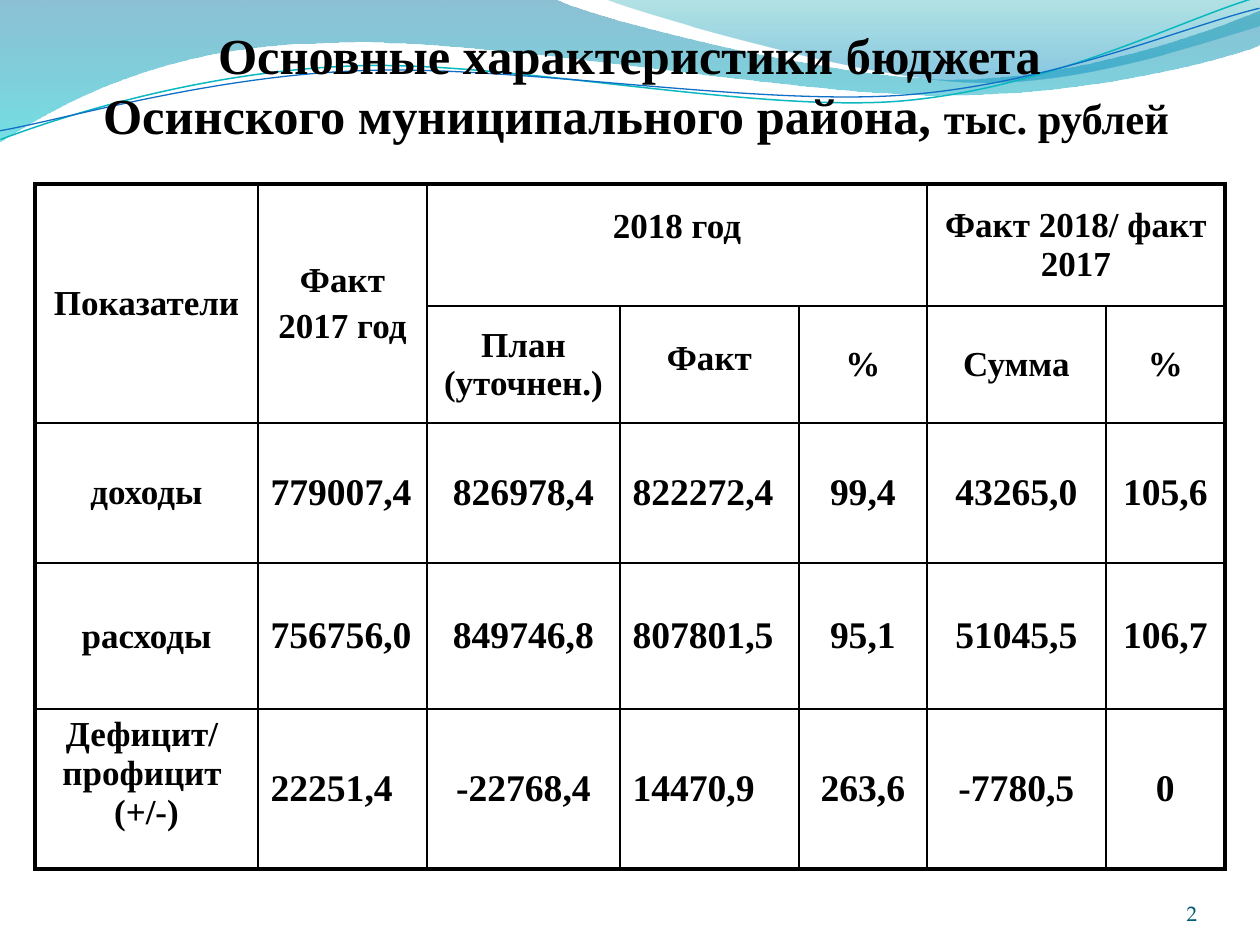
from math import cos, radians, sin

from lxml.etree import SubElement
from pptx import Presentation
from pptx.dml.color import RGBColor
from pptx.enum.text import MSO_ANCHOR, PP_ALIGN
from pptx.oxml.ns import qn
from pptx.util import Emu, Pt

PX = 914400 // 126
COLORS = {"ink": "000000", "number": "045D75", "teal line": "0AB8BF", "blue line": "0F6FC6",
          "deep blue": "0074A1", "aqua": "00C6CF", "sea": "00A1A9", "sky": "008BBF"}
SERIF = "Times New Roman"

TITLE = [("Основные характеристики бюджета \vОсинского муниципального района, ", 28.8),
         ("тыс. рублей", 24.3)]
PAGE_NUMBER = "2"

# None marks a cell covered by a merge
ROWS = [
    ["Показатели", "Факт\n2017 год", "2018 год", None, None, "Факт 2018/ факт 2017", None],
    [None, None, "План (уточнен.)", "Факт", "%", "Сумма", "%"],
    ["доходы", "779007,4", "826978,4", "822272,4", "99,4", "43265,0", "105,6"],
    ["расходы", "756756,0", "849746,8", "807801,5", "95,1", "51045,5", "106,7"],
    ["Дефицит/ \vпрофицит \v(+/-)", "22251,4", "-22768,4", "14470,9", "263,6", "-7780,5", "0"],
]
SPANS = {(0, 0): (2, 1), (0, 1): (2, 1), (0, 2): (1, 3), (0, 5): (1, 2)}
COLUMN_WIDTHS = [223, 169, 193, 179, 128, 179, 119]
ROW_HEIGHTS = [122, 117, 140, 146, 160]
HEADER_ROWS = 2
LEFT_COLUMNS = (1, 3)
RAISED = {(0, 2): 44, (1, 3): 18}  # bottom margin that lifts the text
TOP_ALIGNED = (4, 0)

# Wave outlines: two numbers are a straight step, six are a Bézier curve
BANDS = [
    ([(0, 0), (554, -1), (600, 21, 837, 79, 955, 79), (1075, 79, 1207, 33, 1260, 11),
      (1261, 45), (1239, 55, 1096, 96, 940, 95), (784, 95, 481, 35, 324, 43),
      (163, 45, 58, 105, -1, 142)],
     [(0, "deep blue", 45), (1, "aqua", 55)]),
    ([(604, -1), (641, 14, 859, 78, 969, 82), (1079, 87, 1211, 40, 1260, 26), (1260, 0)],
     [(0, "sea", 30), (0.8, "sky", 45)]),
]
WAVES = [
    ([(0, 140), (60, 117, 199, 72, 349, 66), (498, 59, 747, 112, 898, 101),
      (1050, 89, 1182, 19, 1257, -3)], "teal line", 0.85),
    ([(0, 131), (59, 121, 207, 77, 357, 71), (508, 64, 752, 106, 903, 95),
      (1053, 84, 1186, 26, 1260, 8)], "blue line", 0.75),
]
WAVE_TILT = 2.7
WAVE_PIVOT = (629, 73)


def rgb(name):
    return RGBColor.from_string(COLORS[name])


def pairs(step):
    return list(zip(step[::2], step[1::2]))


def level(point):
    """Turn a point clockwise by the tilt, so the rotated shape puts it back."""
    dx, dy = point[0] - WAVE_PIVOT[0], point[1] - WAVE_PIVOT[1]
    c, s = cos(radians(WAVE_TILT)), sin(radians(WAVE_TILT))
    return WAVE_PIVOT[0] + dx * c - dy * s, WAVE_PIVOT[1] + dx * s + dy * c


def add_outline(page, steps, close, place=lambda point: point):
    points = [place(point) for step in steps for point in pairs(step)]
    builder = page.shapes.build_freeform(*points[0], scale=PX)
    builder.add_line_segments(points[1:], close=close)
    shape = builder.convert_to_shape()
    shape.shadow.inherit = False
    # Join each three straight steps of a curve into one Bézier step
    segments = iter(list(shape._element.iter(qn("a:lnTo"))))
    for step in steps[1:]:
        first = next(segments)
        if len(step) == 6:
            first.tag = qn("a:cubicBezTo")
            for _ in range(2):
                other = next(segments)
                first.append(other[0])
                other.getparent().remove(other)
    return shape


def add_band(page, steps, stops):
    band = add_outline(page, steps, True)
    band.line.fill.background()
    band.fill.gradient()
    band.fill.gradient_angle = 270
    for stop, (position, color, _) in zip(band.fill.gradient_stops, stops):
        stop.position = position
        stop.color.rgb = rgb(color)
    for node, (_, _, opacity) in zip(band._element.spPr.iter(qn("a:srgbClr")), stops):
        SubElement(node, qn("a:alpha"), val=str(opacity * 1000))


def add_wave(page, steps, color, width):
    wave = add_outline(page, steps, False, level)
    wave.rotation = 360 - WAVE_TILT
    wave.fill.background()
    wave.line.color.rgb = rgb(color)
    wave.line.width = Pt(width)


def style(font, size, color="ink", name=SERIF, bold=True):
    font.size, font.name, font.bold = Pt(size), name, bold
    font.color.rgb = rgb(color)


def add_text(page, left, top, width, height, align):
    box = page.shapes.add_textbox(*(Emu(v * PX) for v in (left, top, width, height)))
    frame = box.text_frame
    frame.word_wrap = True
    frame.vertical_anchor = MSO_ANCHOR.BOTTOM
    frame.margin_left = frame.margin_right = frame.margin_top = frame.margin_bottom = 0
    para = frame.paragraphs[0]
    para.alignment = align
    return para


def set_borders(cell, thick_sides):
    properties = cell._tc.get_or_add_tcPr()
    for position, side in enumerate("LRTB"):
        width = Pt(2.25 if side in thick_sides else 1)
        line = properties.makeelement(qn("a:ln" + side), {"w": str(int(width))})
        SubElement(SubElement(line, qn("a:solidFill")), qn("a:srgbClr"), val=COLORS["ink"])
        properties.insert(position, line)


def fill_cell(cell, row, column, text):
    is_number = row >= HEADER_ROWS and column > 0
    is_left = is_number and column in LEFT_COLUMNS
    cell.text = text
    cell.vertical_anchor = MSO_ANCHOR.TOP if (row, column) == TOP_ALIGNED else MSO_ANCHOR.MIDDLE
    cell.margin_bottom = Emu(RAISED.get((row, column), 6) * PX)
    for para in cell.text_frame.paragraphs:
        para.alignment = PP_ALIGN.LEFT if is_left else PP_ALIGN.CENTER
        para.space_before = Pt(0 if is_left else 4)
        style(para.font, 21.5 if is_number else 20)


def add_budget_table(page):
    table = page.shapes.add_table(
        len(ROWS), len(COLUMN_WIDTHS), Emu(35 * PX), Emu(184 * PX),
        Emu(sum(COLUMN_WIDTHS) * PX), Emu(sum(ROW_HEIGHTS) * PX)).table
    table.first_row = table.horz_banding = False
    for column, width in zip(table.columns, COLUMN_WIDTHS):
        column.width = Emu(width * PX)
    for row, height in zip(table.rows, ROW_HEIGHTS):
        row.height = Emu(height * PX)
    for r, texts in enumerate(ROWS):
        for c, text in enumerate(texts):
            cell = table.cell(r, c)
            cell.fill.background()
            if text is None:
                continue
            down, across = SPANS.get((r, c), (1, 1))
            if (down, across) != (1, 1):
                cell.merge(table.cell(r + down - 1, c + across - 1))
            fill_cell(cell, r, c, text)
            edges = {"L": c == 0, "R": c + across == len(texts),
                     "T": r == 0, "B": r + down == len(ROWS)}
            set_borders(cell, [side for side, outer in edges.items() if outer])


def main():
    deck = Presentation()
    deck.slide_width, deck.slide_height = Emu(1260 * PX), Emu(945 * PX)
    page = deck.slides.add_slide(deck.slide_layouts[6])

    # Wavy header
    for band in BANDS:
        add_band(page, *band)
    for wave in WAVES:
        add_wave(page, *wave)

    # Title
    para = add_text(page, 69, 0, 1134, 145, PP_ALIGN.CENTER)
    for text, size in TITLE:
        for i, part in enumerate(text.split("\v")):
            if i:
                para.add_line_break()
            span = para.add_run()
            span.text = part
            style(span.font, size)

    add_budget_table(page)

    # Page number
    para = add_text(page, 1092, 876, 105, 50, PP_ALIGN.RIGHT)
    para.text = PAGE_NUMBER
    style(para.font, 12, "number", "TeX Gyre Pagella", False)

    deck.save("out.pptx")


if __name__ == "__main__":
    main()
